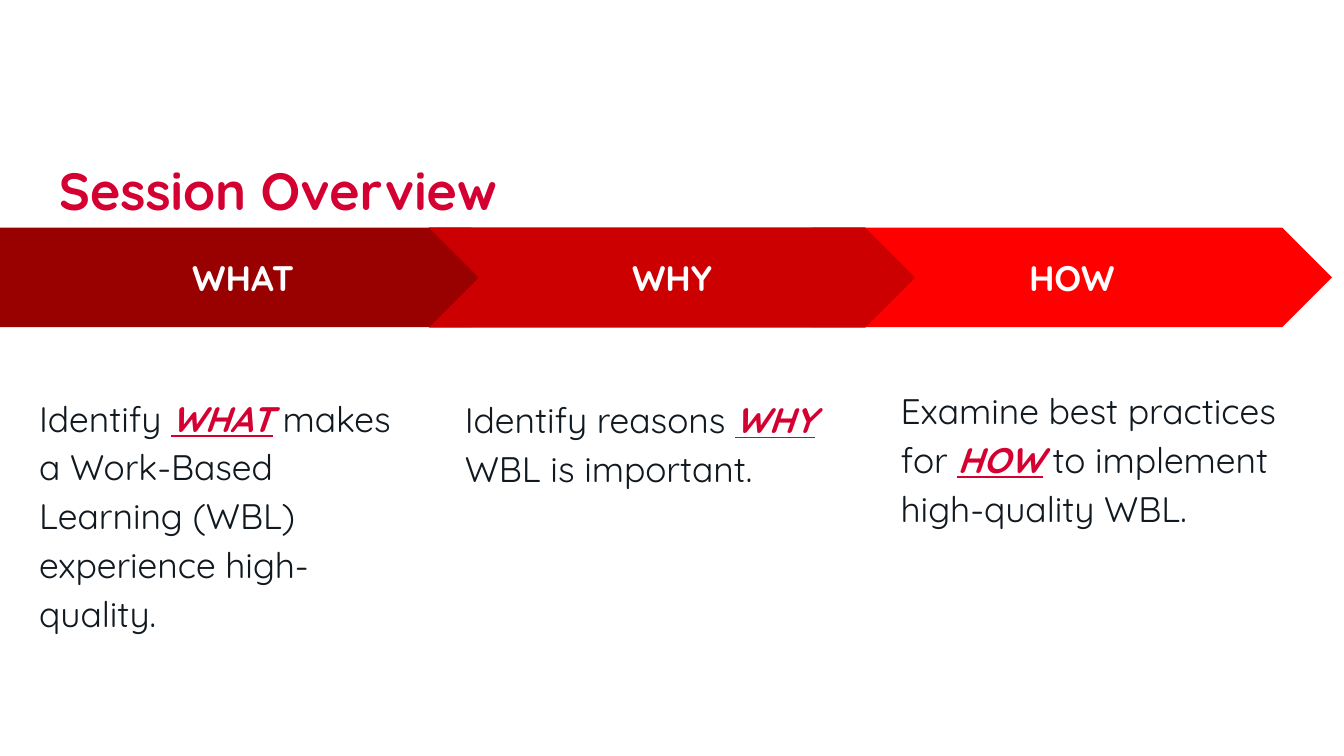
from pptx import Presentation
from pptx.dml.color import RGBColor
from pptx.enum import shapes, text
from pptx.util import Pt

CRIMSON = RGBColor(0xD5, 0x00, 0x32)
INK = RGBColor(0x10, 0x18, 0x20)
WHITE = RGBColor(0xFF, 0xFF, 0xFF)
DARK_RED = RGBColor(0x99, 0x00, 0x00)
MID_RED = RGBColor(0xCC, 0x00, 0x00)
BRIGHT_RED = RGBColor(0xFF, 0x00, 0x00)
CHEVRON = shapes.MSO_SHAPE.CHEVRON
PENTAGON = shapes.MSO_SHAPE.PENTAGON


def set_frame(box, anchor):
    frame = box.text_frame
    frame.word_wrap = True
    frame.auto_size = text.MSO_AUTO_SIZE.NONE
    frame.vertical_anchor = anchor
    frame.margin_left = frame.margin_right = Pt(7.2)
    frame.margin_top = frame.margin_bottom = Pt(7.2)
    return frame.paragraphs[0]


def add_span(para, words, size, color, bold=False, italic=False, underline=False):
    span = para.add_run()
    span.text = words
    span.font.name = "Quicksand"
    span.font.size = Pt(size)
    span.font.color.rgb = color
    span.font.bold = bold
    span.font.italic = italic
    span.font.underline = underline


deck = Presentation()
deck.slide_width = Pt(720)
deck.slide_height = Pt(405)
page = deck.slides.add_slide(deck.slide_layouts[6])

title = page.shapes.add_textbox(Pt(24.5), Pt(72.7), Pt(671), Pt(28.8))
para = set_frame(title, text.MSO_ANCHOR.TOP)
para.line_spacing = 1.15
add_span(para, "Session Overview", 28, CRIMSON, bold=True)

steps = [
    ("HOW", CHEVRON, BRIGHT_RED, (434.8, 122, 278.8, 53.3), (475.4, 198, 238.2, 208.8),
     "Examine best practices for ", " to implement high-quality WBL."),
    ("WHAT ", PENTAGON, DARK_RED, (0, 122, 279.2, 53.3), (13.9, 201.9, 216, 205),
     "Identify ", " makes a Work-Based Learning (WBL) experience high-quality."),
    ("WHY", CHEVRON, MID_RED, (229.8, 121.9, 260.5, 53.7), (241.9, 202.8, 245.5, 204.5),
     "Identify reasons ", " WBL is important."),
]

for label, outline, color, arrow_place, note_place, before, after in steps:
    arrow = page.shapes.add_shape(outline, *map(Pt, arrow_place))
    arrow.adjustments[0] = 0.5
    arrow.shadow.inherit = False
    arrow.fill.solid()
    arrow.fill.fore_color.rgb = color
    arrow.line.fill.background()
    para = set_frame(arrow, text.MSO_ANCHOR.MIDDLE)
    para.alignment = text.PP_ALIGN.CENTER
    add_span(para, label, 19, WHITE, bold=True)

    note = page.shapes.add_textbox(*map(Pt, note_place))
    para = set_frame(note, text.MSO_ANCHOR.TOP)
    para.line_spacing = 1.15
    add_span(para, before, 19, INK)
    add_span(para, label.strip(), 19, CRIMSON, bold=True, italic=True, underline=True)
    add_span(para, after, 19, INK)

deck.save("out.pptx")
